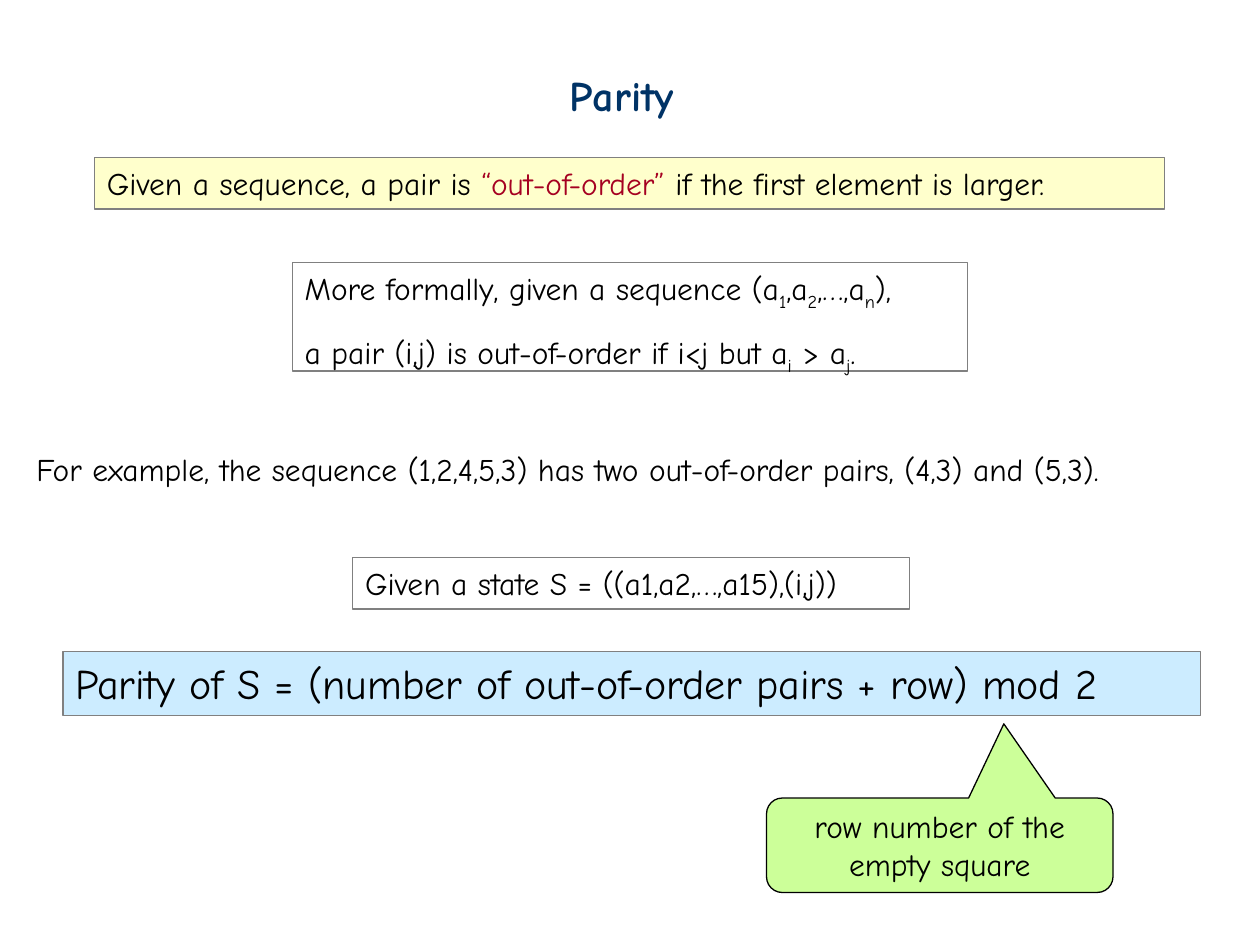
import pptx
import pptx.dml.color
import pptx.enum.shapes
import pptx.enum.text
import pptx.util

Pt = pptx.util.Pt
RGBColor = pptx.dml.color.RGBColor
Shape = pptx.enum.shapes.MSO_SHAPE
Align = pptx.enum.text.PP_ALIGN
Anchor = pptx.enum.text.MSO_ANCHOR

FONT = "Comic Neue"
BLACK = RGBColor(0x00, 0x00, 0x00)
NAVY = RGBColor(0x00, 0x33, 0x66)
CRIMSON = RGBColor(0xA5, 0x00, 0x21)
GRAY = RGBColor(0x80, 0x80, 0x80)
YELLOW = RGBColor(0xFF, 0xFF, 0xCC)
BLUE = RGBColor(0xCC, 0xEC, 0xFF)
GREEN = RGBColor(0xCC, 0xFF, 0x99)


def add_span(para, text, size=18, color=BLACK, bold=False, subscript=False):
    span = para.add_run()
    span.text = text
    span.font.name = FONT
    span.font.size = Pt(size)
    span.font.bold = bold
    span.font.color.rgb = color
    if subscript:
        span._r.get_or_add_rPr().set("baseline", "-25000")


def set_frame(shape, align=Align.LEFT, anchor=Anchor.TOP):
    """Give the shape's text the common insets and return its first paragraph."""
    frame = shape.text_frame
    frame.word_wrap = True
    frame.auto_size = pptx.enum.text.MSO_AUTO_SIZE.NONE
    frame.vertical_anchor = anchor
    frame.margin_left = frame.margin_right = Pt(7.2)
    frame.margin_top = frame.margin_bottom = Pt(3.6)
    para = frame.paragraphs[0]
    para.alignment = align
    return para


def style_outline(shape, fill, line):
    shape.shadow.inherit = False
    if fill is None:
        shape.fill.background()
    else:
        shape.fill.solid()
        shape.fill.fore_color.rgb = fill
    shape.line.color.rgb = line
    shape.line.width = Pt(0.75)


def add_title(page, box, text):
    title = page.shapes.title
    title.left, title.top, title.width, title.height = map(Pt, box)
    add_span(set_frame(title), text, size=24, color=NAVY, bold=True)


def add_note(page, box, text):
    note = page.shapes.add_textbox(*map(Pt, box))
    add_span(set_frame(note), text)


def add_panel(page, box, text="", fill=None, size=18):
    """Add an outlined box and return its first paragraph."""
    panel = page.shapes.add_shape(Shape.RECTANGLE, *map(Pt, box))
    style_outline(panel, fill, GRAY)
    para = set_frame(panel)
    if text:
        add_span(para, text, size=size)
    return para


def add_definition(page, box):
    para = add_panel(page, box, "Given a sequence, a pair is ", fill=YELLOW)
    add_span(para, "“out-of-order”", color=CRIMSON)
    add_span(para, " if the first element is larger.")


def add_formal_definition(page, box):
    """Write both lines, with every second part as a subscript."""
    panel = page.shapes.add_shape(Shape.RECTANGLE, *map(Pt, box))
    style_outline(panel, None, GRAY)
    first = set_frame(panel)
    second = panel.text_frame.add_paragraph()
    second.alignment = Align.LEFT
    second.line_spacing = 1.5
    lines = [
        (first, ["More formally, given a sequence (a", "1", ",a", "2", ",…,a", "n", "),"]),
        (second, ["a pair (i,j) is out-of-order if i<j but a", "i", " > a", "j", "."]),
    ]
    for para, parts in lines:
        for index, part in enumerate(parts):
            add_span(para, part, subscript=index % 2 == 1)


def add_row_callout(page, box, text):
    callout = page.shapes.add_shape(Shape.ROUNDED_RECTANGULAR_CALLOUT, *map(Pt, box))
    for index, value in enumerate((0.185, -1.285, 0.167)):
        callout.adjustments[index] = value
    style_outline(callout, GREEN, BLACK)
    add_span(set_frame(callout, Align.CENTER, Anchor.MIDDLE), text)


def main():
    deck = pptx.Presentation()
    deck.slide_width, deck.slide_height = Pt(720), Pt(540)
    page = deck.slides.add_slide(deck.slide_layouts.get_by_name("Title Only"))

    add_title(page, (318.24, 36, 83.5, 36), "Parity")
    add_definition(page, (54, 90, 611.3, 29.5))
    add_note(page, (13.7, 253.4, 693.4, 28.8),
             "For example, the sequence (1,2,4,5,3) has two out-of-order pairs, (4,3) and (5,3).")
    add_panel(page, (201.6, 318.5, 318.2, 29.5), "Given a state S = ((a1,a2,…,a15),(i,j))")
    add_panel(page, (36, 372.2, 650.2, 36.7),
              "Parity of S = (number of out-of-order pairs + row) mod 2", fill=BLUE, size=24)
    add_row_callout(page, (438, 456, 198, 54), "row number of the empty square")
    add_formal_definition(page, (167, 150, 386, 62))

    deck.save("out.pptx")


if __name__ == "__main__":
    main()
